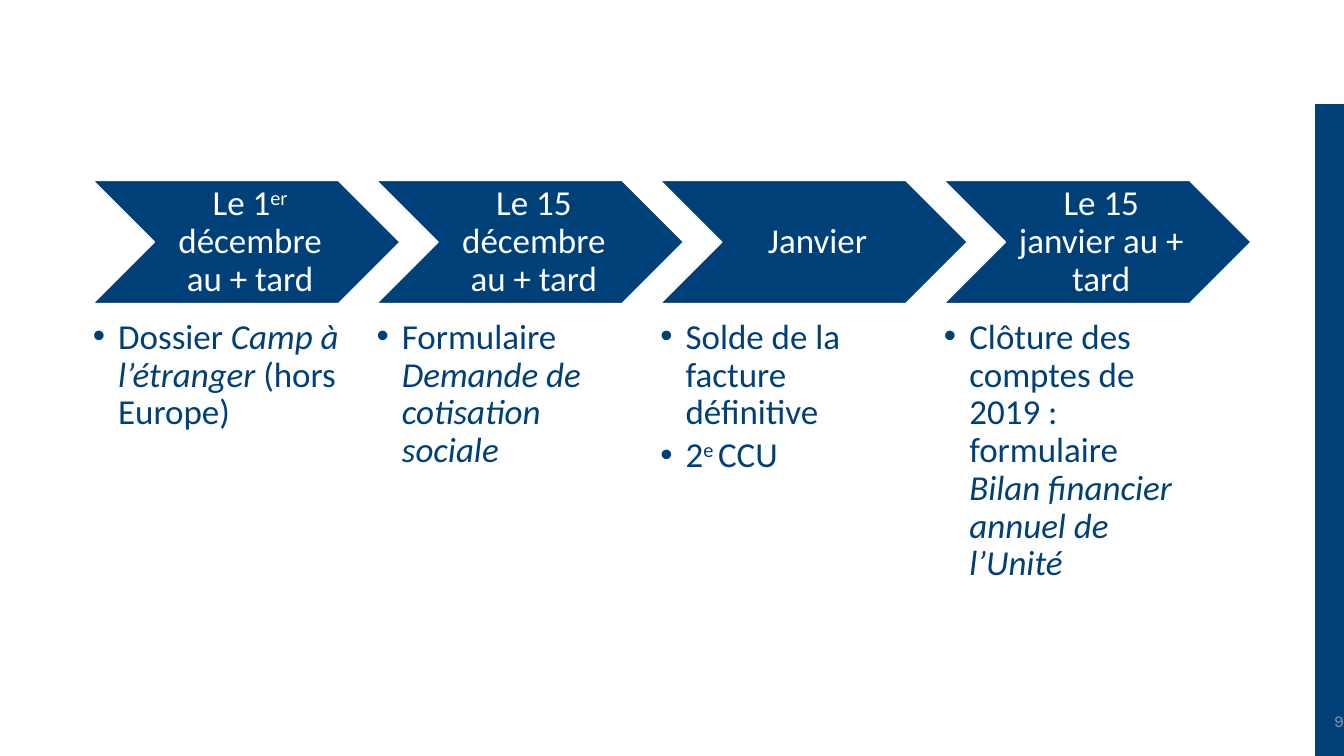
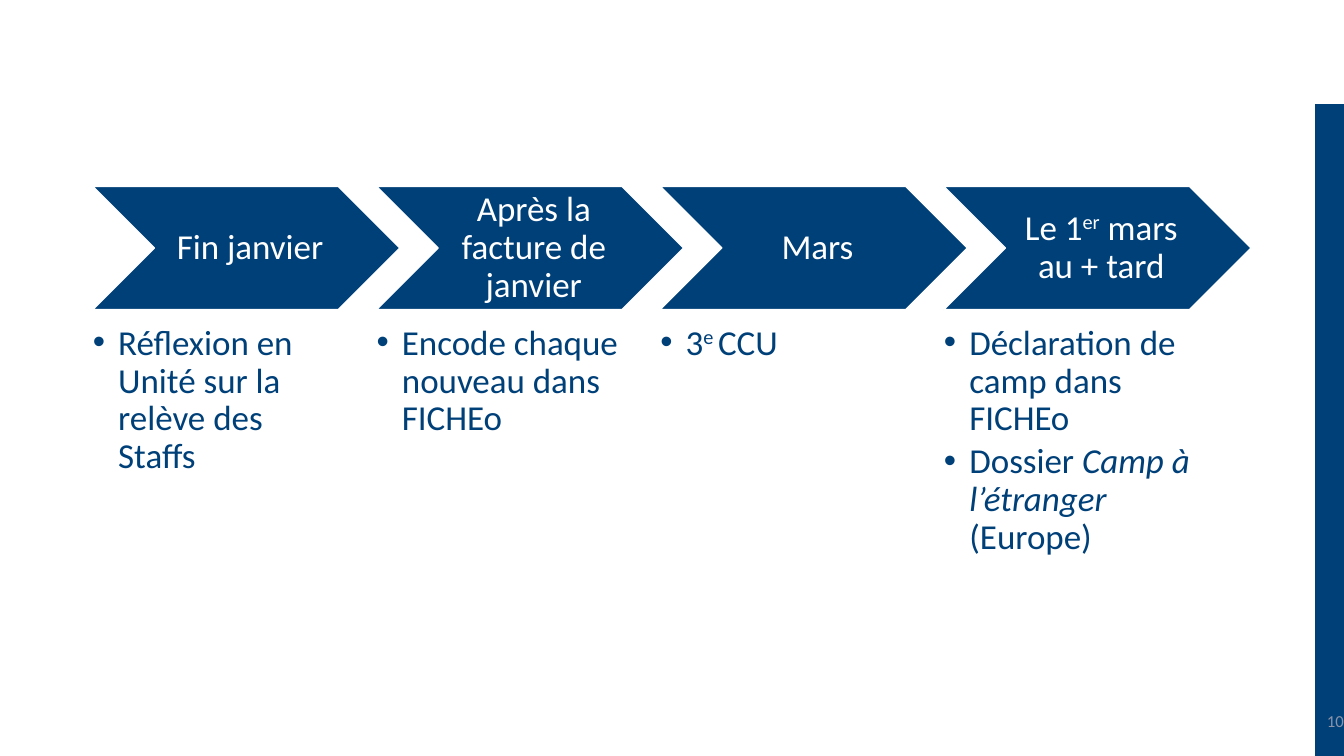
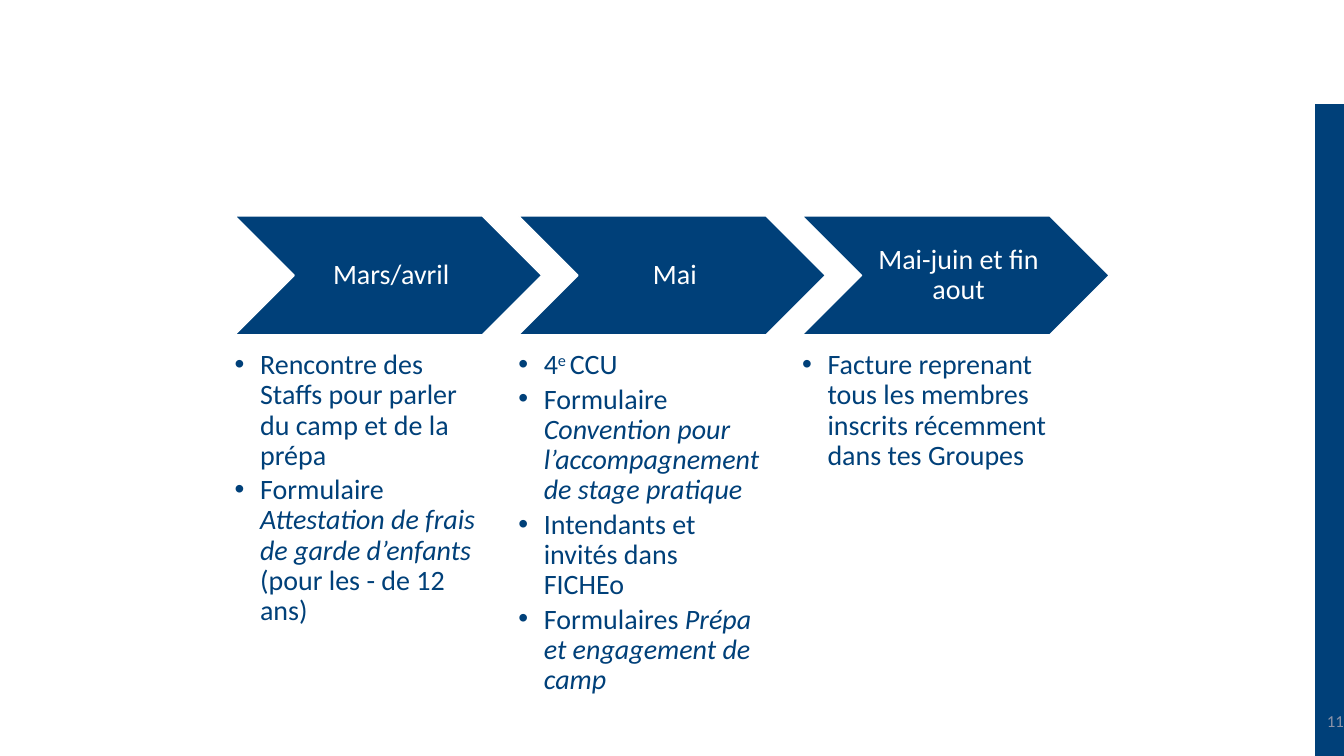
from lxml import etree
from pptx import Presentation
from pptx.dml.color import RGBColor
from pptx.enum.shapes import MSO_SHAPE
from pptx.enum.text import MSO_ANCHOR, PP_ALIGN
from pptx.oxml.ns import qn
from pptx.util import Cm, Pt

CHEVRON, RECTANGLE = MSO_SHAPE.CHEVRON, MSO_SHAPE.RECTANGLE
TOP, MIDDLE = MSO_ANCHOR.TOP, MSO_ANCHOR.MIDDLE
LEFT, CENTER, RIGHT = PP_ALIGN.LEFT, PP_ALIGN.CENTER, PP_ALIGN.RIGHT

# Lengths in centimetres
PAGE_WIDTH, PAGE_HEIGHT = 33.87, 19.05
BAND_TOP, BAND_WIDTH = 2.64, 0.71
STEP_WIDTH, STEP_PITCH = 7.74, 7.15
LIST_WIDTH, LIST_GAP, LIST_INDENT = 6.2, 0.39, 0.64


def color(value):
    return RGBColor.from_string(value)


def apply(target, values):
    for name, value in values.items():
        setattr(target, name, value)


class Timeline:
    """Holds the style and the current slide."""

    blue, white, gray = "004079", "FFFFFF", "8C93A8"
    font = "Calibri"

    def __init__(self, deck):
        self.deck = deck
        self.page = None

    def add_page(self, number, number_font):
        self.page = self.deck.slides.add_slide(self.deck.slide_layouts[6])
        self.shape(RECTANGLE, PAGE_WIDTH - BAND_WIDTH, BAND_TOP,
                   BAND_WIDTH, PAGE_HEIGHT - BAND_TOP, self.blue)
        box = self.text_box(PAGE_WIDTH - 3, 17.65, 3, 1.02)
        self.frame(box, MIDDLE, (0, 0, 0, 0))
        self.fill_para(box.text_frame.paragraphs[0], number, 12, self.gray,
                       RIGHT, 1, number_font)

    def shape(self, kind, left, top, width, height, line):
        shape = self.page.shapes.add_shape(
            kind, Cm(left), Cm(top), Cm(width), Cm(height))
        shape.shadow.inherit = False
        shape.fill.solid()
        shape.fill.fore_color.rgb = color(self.blue)
        shape.line.color.rgb = color(line)
        shape.line.width = Pt(1)
        return shape

    def text_box(self, left, top, width, height):
        return self.page.shapes.add_textbox(
            Cm(left), Cm(top), Cm(width), Cm(height))

    def frame(self, box, anchor, insets):
        left, top, right, bottom = map(Cm, insets)
        apply(box.text_frame, {
            "word_wrap": True, "vertical_anchor": anchor,
            "margin_left": left, "margin_top": top,
            "margin_right": right, "margin_bottom": bottom})

    def fill_para(self, para, text, size, ink, align, spacing=0.9, font=None):
        """Text between * is italic, text between ^ is superscript."""
        apply(para, {"alignment": align, "line_spacing": spacing})
        for i, part in enumerate(text.split("*")):
            for j, piece in enumerate(part.split("^")):
                if not piece:
                    continue
                span = para.add_run()
                span.text = piece
                apply(span.font, {"name": font or self.font,
                                  "size": Pt(size), "italic": i % 2 == 1})
                span.font.color.rgb = color(ink)
                if j % 2:
                    span._r.get_or_add_rPr().set("baseline", "30000")

    def step(self, left, top, height, label, size):
        chevron = self.shape(CHEVRON, left, top, STEP_WIDTH, height,
                             self.white)
        inset = size * 0.0036
        self.frame(chevron, MIDDLE, (size * 0.011, inset, inset, inset))
        self.fill_para(chevron.text_frame.paragraphs[0], label, size,
                       self.white, CENTER)

    def bullets(self, left, top, height, items, size):
        box = self.text_box(left, top, LIST_WIDTH, height)
        self.frame(box, TOP, (0, 0, 0, 0))
        for index, item in enumerate(items):
            para = (box.text_frame.add_paragraph() if index
                    else box.text_frame.paragraphs[0])
            properties = para._p.get_or_add_pPr()
            properties.set("marL", str(Cm(LIST_INDENT)))
            properties.set("indent", str(-Cm(LIST_INDENT)))
            etree.SubElement(properties, qn("a:buFont"), typeface="Arial")
            etree.SubElement(properties, qn("a:buChar"), char="•")
            if index:
                para.space_before = Pt(size * 0.15)
            self.fill_para(para, item, size, self.blue, LEFT)

    def steps(self, top, step_height, list_height, size, columns):
        """Centres the row of steps on the page."""
        row_width = (len(columns) - 1) * STEP_PITCH + STEP_WIDTH
        first = (PAGE_WIDTH - row_width) / 2
        for index, (label, items) in enumerate(columns):
            left = first + index * STEP_PITCH
            self.step(left, top, step_height, label, size)
            self.bullets(left, top + step_height + LIST_GAP, list_height,
                         items, size)


# Number, number font, top, step height, list height, text size, columns
PAGES = [
    ("9", "Karla", 4.55, 3.1, 6.88, 25, [
        ("Le 1^er^ décembre au + tard",
         ["Dossier *Camp à l’étranger* (hors Europe)"]),
        ("Le 15 décembre au + tard",
         ["Formulaire* Demande de cotisation sociale*"]),
        ("Janvier",
         ["Solde de la facture définitive", "2^e ^CCU"]),
        ("Le 15 janvier au + tard",
         ["Clôture des comptes de 2019 : formulaire "
          "*Bilan financier annuel de l’Unité*"]),
    ]),
    ("10", "Calibri", 4.7, 3.1, 5.97, 25, [
        ("Fin janvier",
         ["Réflexion en Unité sur la relève des Staffs"]),
        ("Après la facture de janvier",
         ["Encode chaque nouveau dans FICHEo"]),
        ("Mars", ["3^e ^CCU"]),
        ("Le 1^er^ mars au + tard",
         ["Déclaration de camp dans FICHEo",
          "Dossier *Camp à l’étranger *(Europe)"]),
    ]),
    ("11", "Calibri", 5.44, 3, 8.23, 20, [
        ("Mars/avril",
         ["Rencontre des Staffs pour parler du camp et de la prépa",
          "Formulaire *Attestation de frais de garde d’enfants *"
          "(pour les - de 12 ans)"]),
        ("Mai",
         ["4^e ^CCU",
          "Formulaire *Convention pour l’accompagnement "
          "de stage pratique*",
          "Intendants et invités dans FICHEo",
          "Formulaires* Prépa et engagement de camp*"]),
        ("Mai-juin et fin aout",
         ["Facture reprenant tous les membres inscrits récemment "
          "dans tes Groupes"]),
    ]),
]


def main():
    deck = Presentation()
    deck.slide_width, deck.slide_height = Cm(PAGE_WIDTH), Cm(PAGE_HEIGHT)
    timeline = Timeline(deck)
    for number, number_font, *layout in PAGES:
        timeline.add_page(number, number_font)
        timeline.steps(*layout)
    deck.save("out.pptx")


if __name__ == "__main__":
    main()
